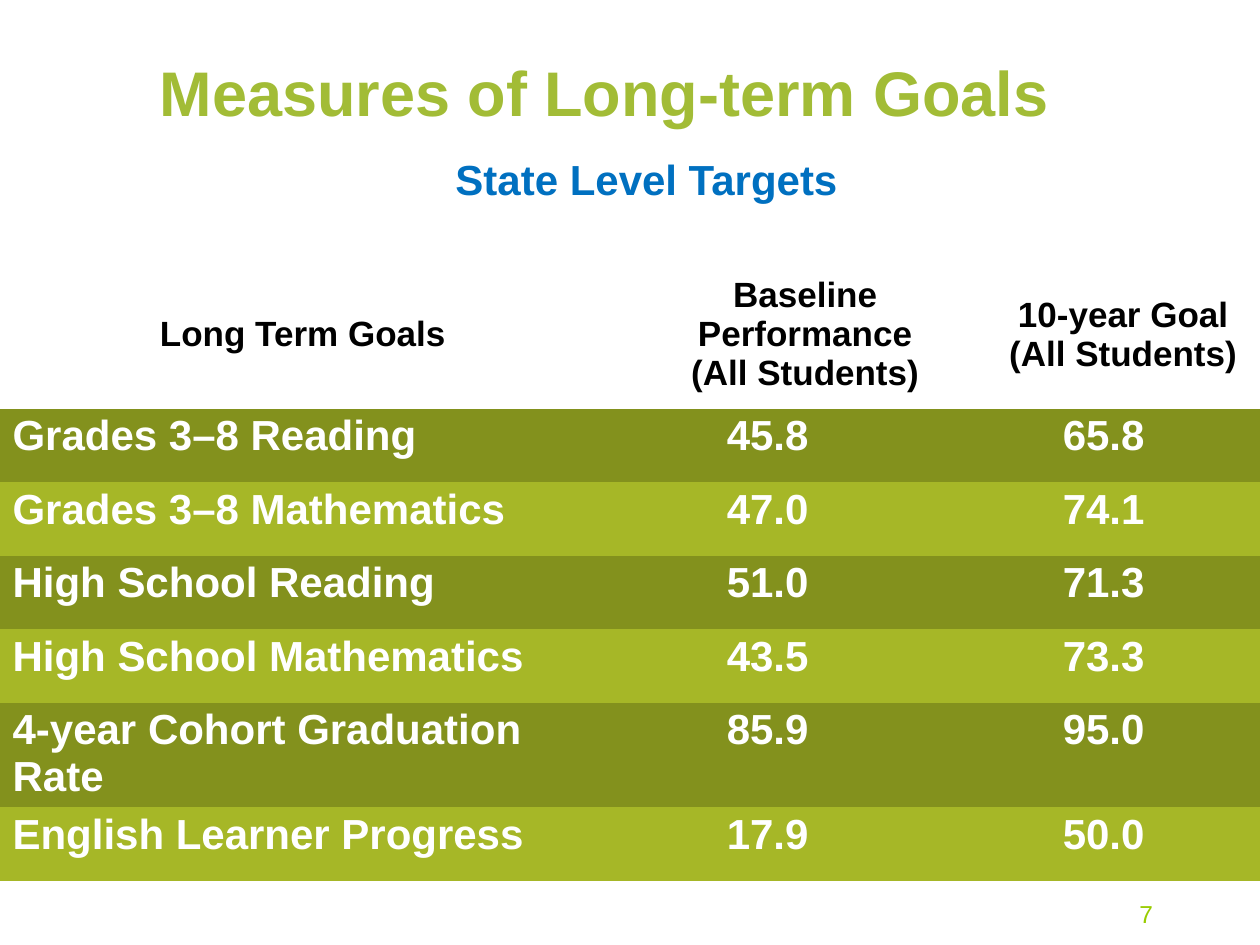
from pptx import Presentation
from pptx.dml.color import RGBColor
from pptx.enum.text import MSO_ANCHOR, PP_ALIGN
from pptx.util import Pt

LEFT, CENTER, RIGHT = PP_ALIGN.LEFT, PP_ALIGN.CENTER, PP_ALIGN.RIGHT
TOP, MIDDLE = MSO_ANCHOR.TOP, MSO_ANCHOR.MIDDLE
TITLE_GREEN = RGBColor(0xA2, 0xBC, 0x36)
BLUE = RGBColor(0x00, 0x70, 0xC0)
BLACK = RGBColor(0x00, 0x00, 0x00)
WHITE = RGBColor(0xFF, 0xFF, 0xFF)
NUMBER_GREEN = RGBColor(0x99, 0xCC, 0x00)
BANDS = (RGBColor(0x83, 0x91, 0x1D), RGBColor(0xA6, 0xB7, 0x27))
NO_STYLE = "{2D5ABB26-0587-4C30-8999-92F81FD0307C}"

COLUMN_WIDTHS = (352.8, 188.6, 178.6)
HEADER_HEIGHT, ROW_HEIGHT = 119.9, 42
HEADERS = (
    (["Long Term Goals"], LEFT, 91.4, 0),
    (["Baseline Performance", "(All Students)"], CENTER, 26, 0),
    (["10-year Goal (All Students)"], LEFT, 35.3, 5),
)
BODY_LAYOUT = ((LEFT, 7.2), (LEFT, 62.5), (CENTER, 0))
GOALS = (
    ("Grades 3–8 Reading", "45.8", "65.8"),
    ("Grades 3–8 Mathematics", "47.0", "74.1"),
    ("High School Reading", "51.0", "71.3"),
    ("High School Mathematics", "43.5", "73.3"),
    ("4-year Cohort Graduation Rate", "85.9", "95.0"),
    ("English Learner Progress", "17.9", "50.0"),
)


class SlideBuilder:
    """Holds the slide and its font, and adds each kind of element."""

    def __init__(self, slide, font_name="Arial"):
        self.slide = slide
        self.font_name = font_name

    def set_text(self, paragraph, text, size, color, bold=True, align=LEFT, margin=0, indent=0):
        paragraph.text = text
        paragraph.alignment = align
        properties = paragraph._p.get_or_add_pPr()
        properties.set("marL", str(Pt(margin)))
        properties.set("indent", str(Pt(indent)))
        font = paragraph.font
        font.name, font.size, font.bold = self.font_name, Pt(size), bold
        font.color.rgb = color

    def text_box(self, left, top, width, height):
        shape = self.slide.shapes.add_textbox(Pt(left), Pt(top), Pt(width), Pt(height))
        shape.text_frame.word_wrap = True
        return shape.text_frame

    def title(self, text, subtitle):
        frame = self.text_box(84.2, 27.2, 582, 104.6)
        self.set_text(frame.paragraphs[0], text, 36, TITLE_GREEN)
        paragraph = frame.add_paragraph()
        self.set_text(paragraph, subtitle, 24, BLUE, margin=169)
        paragraph.space_before = Pt(13.5)

    def slide_number(self, text):
        frame = self.text_box(516, 510, 150, 36)
        self.set_text(frame.paragraphs[0], text, 14, NUMBER_GREEN, bold=False, align=RIGHT)

    def cell(self, cell, lines, size, color, fill, anchor, margin_top, **layout):
        cell.margin_left = cell.margin_right = cell.margin_bottom = 0
        cell.margin_top = Pt(margin_top)
        cell.vertical_anchor = anchor
        if fill is None:
            cell.fill.background()
        else:
            cell.fill.solid()
            cell.fill.fore_color.rgb = fill
        frame = cell.text_frame
        for index, line in enumerate(lines):
            paragraph = frame.add_paragraph() if index else frame.paragraphs[0]
            self.set_text(paragraph, line, size, color, **layout)

    def goals_table(self, left, top):
        height = HEADER_HEIGHT + ROW_HEIGHT * len(GOALS)
        table = self.slide.shapes.add_table(
            len(GOALS) + 1, len(HEADERS), Pt(left), Pt(top), Pt(sum(COLUMN_WIDTHS)), Pt(height)
        ).table
        table.first_row = table.horz_banding = False
        table._tbl.tblPr[0].text = NO_STYLE
        for column, width in zip(table.columns, COLUMN_WIDTHS):
            column.width = Pt(width)
        for index, row in enumerate(table.rows):
            row.height = Pt(ROW_HEIGHT if index else HEADER_HEIGHT)
        for index, (lines, align, margin, indent) in enumerate(HEADERS):
            self.cell(table.cell(0, index), lines, 20, BLACK, None, MIDDLE, 34.6,
                      align=align, margin=margin, indent=indent)
        for row, goal in enumerate(GOALS):
            for column, (text, (align, margin)) in enumerate(zip(goal, BODY_LAYOUT)):
                self.cell(table.cell(row + 1, column), [text], 24, WHITE,
                          BANDS[row % 2], TOP, 2.2, align=align, margin=margin)


def main():
    presentation = Presentation()
    presentation.slide_width, presentation.slide_height = Pt(720), Pt(540)
    builder = SlideBuilder(presentation.slides.add_slide(presentation.slide_layouts[6]))
    builder.title("Measures of Long-term Goals", "State Level Targets")
    builder.goals_table(0, 113.8)
    builder.slide_number("7")
    presentation.save("out.pptx")


if __name__ == "__main__":
    main()
